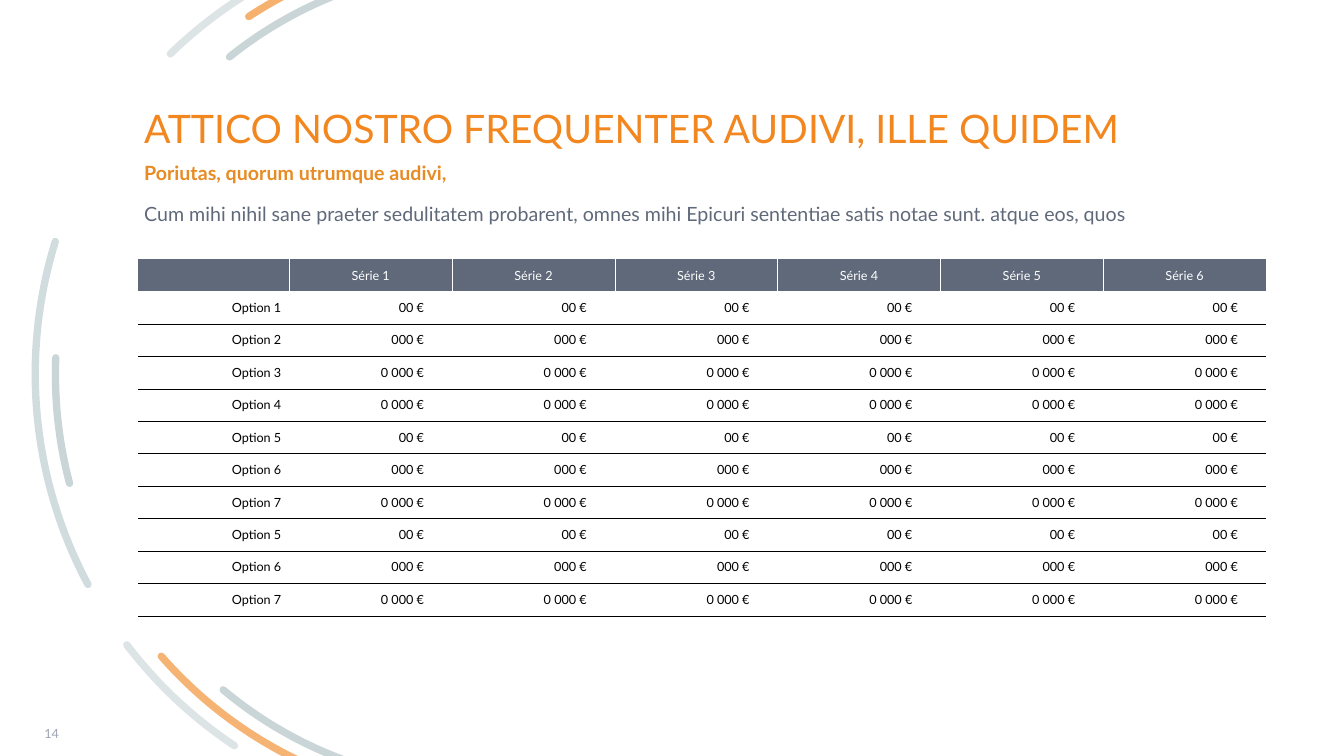
from lxml import etree
from pptx import Presentation
from pptx.dml.color import RGBColor
from pptx.enum import shapes, text
from pptx.oxml.ns import qn
from pptx.util import Pt

ORANGE, SLATE, MIST, WHITE, BLACK = "F2861F", "5F697A", "CAD5D7", "FFFFFF", "000000"
LEFT, RIGHT, MID = text.PP_ALIGN.LEFT, text.PP_ALIGN.RIGHT, text.PP_ALIGN.CENTER
TOP, LOW, HALF = text.MSO_ANCHOR.TOP, text.MSO_ANCHOR.BOTTOM, text.MSO_ANCHOR.MIDDLE
PLAIN = "{2D5ABB26-0587-4C30-8999-92F81FD0307C}"

RINGS = {
    "outer": (25.2, -51.84, 637.92),
    "middle": (39.6, -38.16, 611.28),
    "inner": (54.72, -23.76, 584.64),
}
ARCS = [
    ("outer", 342.75, 28.13, "A8BEC1", 52),
    ("outer", 279.92, 314.22, MIST, 63),
    ("middle", 41.18, 111.46, ORANGE, 61),
    ("middle", 243.6, 303.25, ORANGE, 63),
    ("middle", 357.77, 14.74, MIST, 100),
    ("inner", 257.01, 308.78, MIST, 100),
    ("outer", 37.35, 56.37, MIST, 63),
    ("inner", 50.07, 84.97, MIST, 100),
]
SUMS = ["00 €", "000 €", "0 000 €", "0 000 €"]
ROWS = [(n, SUMS[(n - 1) % 4]) for n in range(1, 8)]
ROWS += ROWS[4:]


def tint(hue):
    return RGBColor.from_string(hue)


def apply(item, form):
    for key, val in form.items():
        setattr(item, key, val)


def write(para, words, size, hue, bold=False, align=LEFT):
    para.alignment = align
    run = para.add_run()
    run.text = words
    apply(run.font, {"name": "Lato", "size": Pt(size), "bold": bold})
    run.font.color.rgb = tint(hue)


def frame(slide, box, anchor, pad):
    body = slide.shapes.add_textbox(*map(Pt, box)).text_frame
    apply(body, {"word_wrap": True, "vertical_anchor": anchor,
                 "margin_left": 0, "margin_right": 0,
                 "margin_top": Pt(pad), "margin_bottom": Pt(pad)})
    return body


def arc(slide, ring, start, end, hue, alpha):
    x, y, size = RINGS[ring]
    item = slide.shapes.add_shape(shapes.MSO_SHAPE.ARC, Pt(x), Pt(y), Pt(size), Pt(size))
    item.shadow.inherit = False
    item.fill.background()
    item.line.width = Pt(5.25)
    item.line.color.rgb = tint(hue)
    for spot, angle in enumerate((start, end)):
        item.adjustments[spot] = angle * 0.6
    props = item._element.spPr
    props.find(qn("a:xfrm")).set("flipH", "1")
    line = props.find(qn("a:ln"))
    line.set("cap", "rnd")
    if alpha < 100:
        shade = line.find(".//" + qn("a:srgbClr"))
        etree.SubElement(shade, qn("a:alpha"), val=str(alpha * 1000))


def title(slide, box):
    body = frame(slide, box, LOW, 3.6)
    write(body.paragraphs[0], "ATTICO NOSTRO FREQUENTER AUDIVI, ILLE QUIDEM", 28, ORANGE)


def intro(slide, box):
    body = frame(slide, box, TOP, 3.6)
    write(body.paragraphs[0], "Poriutas, quorum utrumque audivi,", 14, "E78B24", True)
    para = body.add_paragraph()
    para.space_before = Pt(12)
    write(para, "Cum mihi nihil sane praeter sedulitatem probarent, omnes mihi "
          "Epicuri sententiae satis notae sunt. atque eos, quos", 14, SLATE)


def number(slide, box):
    write(frame(slide, box, LOW, 0).paragraphs[0], "14", 9, "9CA4B2")


def border(cell, side, hue, width):
    line = etree.SubElement(cell._tc.get_or_add_tcPr(), qn("a:ln" + side), w=str(Pt(width)))
    fill = etree.SubElement(line, qn("a:solidFill"))
    etree.SubElement(fill, qn("a:srgbClr"), val=hue)


def head(cell, col, last):
    if col > 0:
        border(cell, "L", WHITE, 0.5)
    if col < last:
        border(cell, "R", WHITE, 0.5)
    cell.fill.solid()
    cell.fill.fore_color.rgb = tint(SLATE)
    para = cell.text_frame.paragraphs[0]
    if col:
        write(para, f"Série {col}", 9, WHITE, align=MID)
    else:
        etree.SubElement(para._p, qn("a:endParaRPr"), sz="900")


def entry(cell, words):
    border(cell, "B", BLACK, 0.25)
    cell.fill.background()
    write(cell.text_frame.paragraphs[0], words, 9, BLACK, align=RIGHT)


def prices(slide, box):
    x, y, wide, high = box
    count, first = 7, 108
    item = slide.shapes.add_table(len(ROWS) + 1, count, Pt(x), Pt(y), Pt(wide), Pt(high))
    table = item.table
    table.horz_banding = False
    table._tbl.tblPr.find(qn("a:tableStyleId")).text = PLAIN
    for col, part in enumerate(table.columns):
        part.width = Pt((wide - first) / (count - 1) if col else first)
    for row, part in enumerate(table.rows):
        part.height = Pt(high / (len(ROWS) + 1))
        for col, cell in enumerate(part.cells):
            inset = 20.16 if row and col else 5.76
            apply(cell, {"margin_left": Pt(5.76), "margin_right": Pt(inset),
                         "margin_top": Pt(2.88), "margin_bottom": Pt(2.88),
                         "vertical_anchor": HALF})
            if row:
                option, price = ROWS[row - 1]
                entry(cell, price if col else f"Option {option}")
            else:
                head(cell, col, count - 1)


def main():
    deck = Presentation()
    apply(deck, {"slide_width": Pt(960), "slide_height": Pt(540)})
    slide = deck.slides.add_slide(deck.slide_layouts[6])
    for sweep in ARCS:
        arc(slide, *sweep)
    title(slide, (103, 21.6, 784, 90))
    number(slide, (31.7, 500.4, 224, 28.8))
    intro(slide, (103, 111.6, 782.6, 175))
    prices(slide, (98.64, 185.04, 805.68, 255))
    deck.save("out.pptx")


if __name__ == "__main__":
    main()
